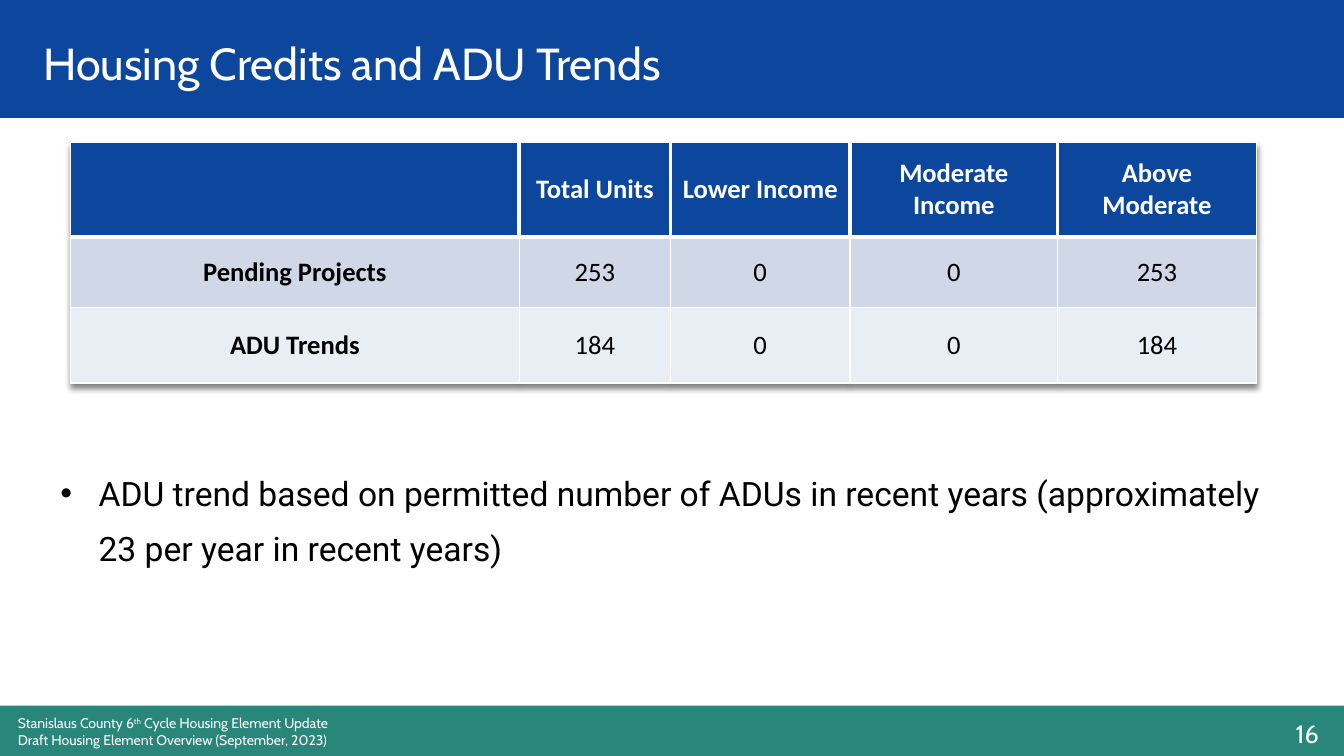
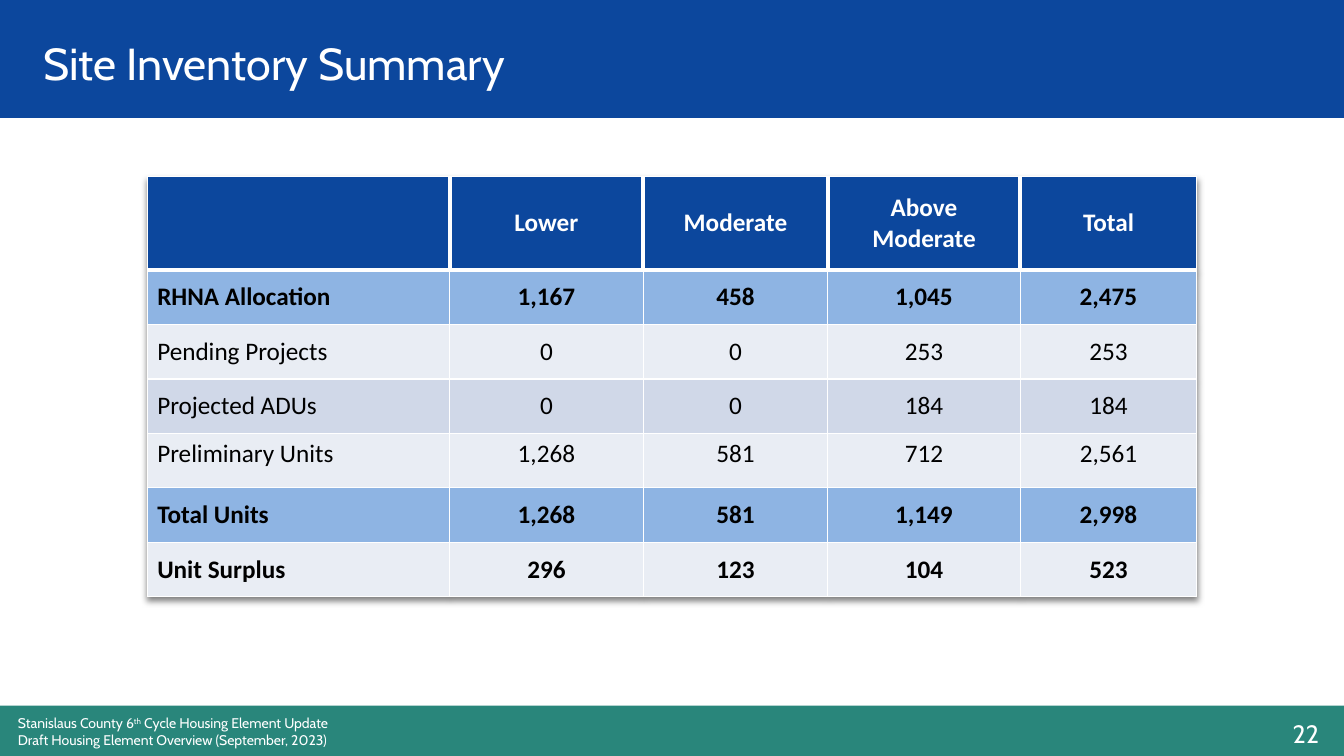
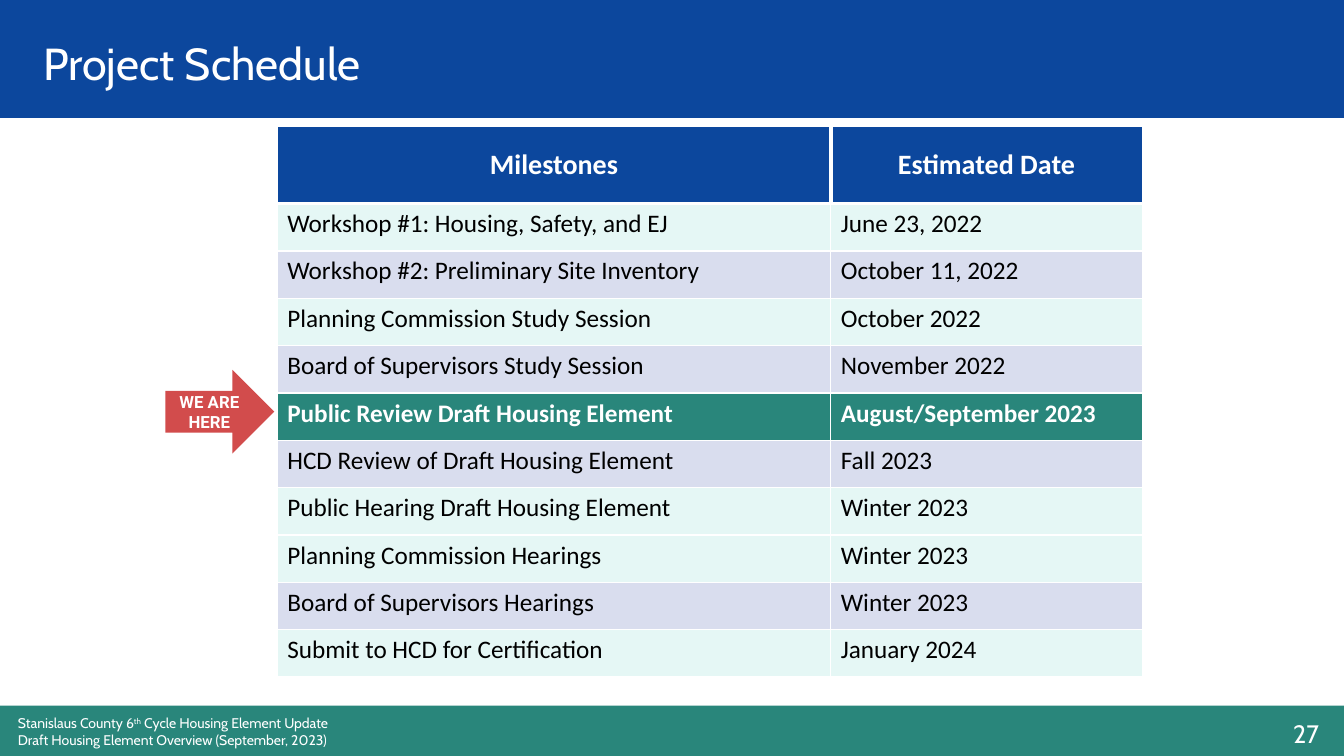
"""Build three housing element slides with tables and a schedule."""
from dataclasses import dataclass

from lxml.etree import SubElement
from pptx import Presentation
from pptx.dml.color import RGBColor
from pptx.enum.shapes import MSO_SHAPE
from pptx.enum.text import MSO_ANCHOR, PP_ALIGN
from pptx.oxml import parse_xml
from pptx.oxml.ns import nsdecls, qn
from pptx.util import Inches, Pt

COLORS = {
    "white": "FFFFFF", "black": "000000", "blue": "0C479D", "green": "29867B",
    "sky": "8EB4E3", "steel": "D0D8E8", "pale": "E9EDF4",
    "mint": "E5F7F5", "lilac": "D9DDEE", "red": "C00000",
}
LEFT, CENTER, RIGHT = PP_ALIGN.LEFT, PP_ALIGN.CENTER, PP_ALIGN.RIGHT
TOP, MIDDLE = MSO_ANCHOR.TOP, MSO_ANCHOR.MIDDLE


@dataclass
class Row:
    cells: list
    fill: str
    color: str = "black"
    bold_cols: int = 0
    anchor: MSO_ANCHOR = MIDDLE


def rgb(name):
    return RGBColor.from_string(COLORS[name])


def add_text(p, text, size=18, font="Calibri", color="white", bold=False,
             align=LEFT, baseline=0):
    p.alignment = align
    r = p.add_run()
    r.text = text
    r.font.size = Pt(size)
    r.font.name = font
    r.font.bold = bold
    r.font.color.rgb = rgb(color)
    if baseline:
        r._r.get_or_add_rPr().set("baseline", str(baseline * 1000))


def add_box(slide, x, y, w, h, anchor=TOP):
    sp = slide.shapes.add_textbox(Inches(x), Inches(y), Inches(w), Inches(h))
    tf = sp.text_frame
    tf.word_wrap = True
    tf.vertical_anchor = anchor
    return tf.paragraphs[0]


def add_filled(slide, kind, x, y, w, h, fill, alpha=100):
    sp = slide.shapes.add_shape(kind, Inches(x), Inches(y), Inches(w), Inches(h))
    sp.shadow.inherit = False
    sp.fill.solid()
    sp.fill.fore_color.rgb = rgb(fill)
    sp.line.fill.background()
    if alpha < 100:
        clr = sp._element.spPr.find(qn("a:solidFill"))[0]
        SubElement(clr, qn("a:alpha")).set("val", str(alpha * 1000))
    return sp


def add_bullet(p, text, **fmt):
    pPr = p._p.get_or_add_pPr()
    pPr.set("marL", str(Inches(0.38)))
    pPr.set("indent", str(-Inches(0.38)))
    SubElement(pPr, qn("a:buFont")).set("typeface", "Arial")
    SubElement(pPr, qn("a:buChar")).set("char", "•")
    p.line_spacing = Pt(39)
    add_text(p, text, **fmt)


def add_borders(cell, widths):
    tcPr = cell._tc.get_or_add_tcPr()
    for side, width in zip("LRTB", widths):
        tcPr.append(parse_xml(
            f'<a:ln{side} {nsdecls("a")} w="{Pt(width)}"><a:solidFill>'
            f'<a:srgbClr val="{COLORS["white"]}"/></a:solidFill></a:ln{side}>'))


def add_table_shadow(table):
    table._tbl.tblPr.insert(0, parse_xml(
        f'<a:effectLst {nsdecls("a")}><a:outerShdw blurRad="{Pt(4)}" '
        f'dist="{Pt(3)}" dir="5400000" algn="t" rotWithShape="0">'
        f'<a:srgbClr val="{COLORS["black"]}"><a:alpha val="50000"/></a:srgbClr>'
        '</a:outerShdw></a:effectLst>'))


def add_grid(slide, x, y, widths, heights, rows, aligns, size=18,
             header_size=18, shadow=True):
    frame = slide.shapes.add_table(
        len(rows), len(widths), Inches(x), Inches(y),
        Inches(sum(widths)), Inches(sum(heights)))
    table = frame.table
    table.horz_banding = False
    if shadow:
        add_table_shadow(table)
    for col, width in zip(table.columns, widths):
        col.width = Inches(width)
    last = len(widths) - 1
    for i, (row, height) in enumerate(zip(rows, heights)):
        table.rows[i].height = Inches(height)
        for j, text in enumerate(row.cells):
            cell = table.cell(i, j)
            cell.vertical_anchor = row.anchor
            inner = 1 if i else 3
            add_borders(cell, (inner if j else 1, inner if j < last else 1,
                               3 if i == 1 else 1, inner))
            cell.fill.solid()
            cell.fill.fore_color.rgb = rgb(row.fill)
            if text:
                add_text(cell.text_frame.paragraphs[0], text,
                         size=size if i else header_size, color=row.color,
                         bold=j < row.bold_cols,
                         align=aligns[j] if i else CENTER)


def add_slide(prs, title, number):
    slide = prs.slides.add_slide(prs.slide_layouts[6])
    add_filled(slide, MSO_SHAPE.RECTANGLE, 0, -0.04, 13.33, 1.21, "blue")
    add_filled(slide, MSO_SHAPE.RECTANGLE, 0, 7, 13.33, 0.5, "green")
    p = add_box(slide, 0.08, 7.04, 7.75, 0.45)
    footer = {"size": 10, "font": "Cabin"}
    add_text(p, "Stanislaus County 6", **footer)
    add_text(p, "th", baseline=30, **footer)
    add_text(p, " Cycle Housing Element Update", **footer)
    p.add_line_break()
    add_text(p, "Draft Housing Element Overview (September, 2023)", **footer)
    add_text(add_box(slide, 10.07, 7.08, 3.11, 0.5), str(number),
             font="Cabin", align=RIGHT)
    add_text(add_box(slide, 0.33, 0.16, 10.78, 0.92, MIDDLE), title,
             size=32, font="Cabin")
    return slide


def header(*cells):
    return Row(list(cells), "blue", "white", len(cells))


def build_credits(prs):
    slide = add_slide(prs, "Housing Credits and ADU Trends", 16)
    rows = [
        header("", "Total Units", "Lower Income", "Moderate Income",
               "Above Moderate"),
        Row(["Pending Projects", "253", "0", "0", "253"], "steel", bold_cols=1),
        Row(["ADU Trends", "184", "0", "0", "184"], "pale", bold_cols=1),
    ]
    add_grid(slide, 0.7, 1.41, [4.45, 1.5, 1.78, 2.06, 1.97],
             [0.94, 0.7, 0.75], rows, [CENTER] * 5, size=19, header_size=19)
    add_bullet(add_box(slide, 0.5, 4.5, 12.17, 2.2),
               "ADU trend based on permitted number of ADUs in recent years "
               "(approximately 23 per year in recent years)",
               size=24, font="Roboto", color="black")


def build_inventory(prs):
    slide = add_slide(prs, "Site Inventory Summary", 22)
    rows = [
        header("", "Lower", "Moderate", "Above Moderate", "Total"),
        Row(["RHNA Allocation", "1,167", "458", "1,045", "2,475"], "sky",
            bold_cols=5),
        Row(["Pending Projects", "0", "0", "253", "253"], "pale"),
        Row(["Projected ADUs", "0", "0", "184", "184"], "steel"),
        Row(["Preliminary Units", "1,268", "581", "712", "2,561"], "pale",
            anchor=TOP),
        Row(["Total Units", "1,268", "581", "1,149", "2,998"], "sky",
            bold_cols=5),
        Row(["Unit Surplus", "296", "123", "104", "523"], "pale", bold_cols=5),
    ]
    add_grid(slide, 1.46, 1.75, [3, 1.92, 1.83, 1.91, 1.75],
             [0.93] + [0.54] * 6, rows, [LEFT] + [CENTER] * 4)


def build_schedule(prs):
    slide = add_slide(prs, "Project Schedule", 27)
    milestones = [
        ("Workshop #1: Housing, Safety, and EJ", "June 23, 2022", "mint"),
        ("Workshop #2: Preliminary Site Inventory", "October 11, 2022", "lilac"),
        ("Planning Commission Study Session", "October 2022", "mint"),
        ("Board of Supervisors Study Session", "November 2022", "lilac"),
        ("Public Review Draft Housing Element", "August/September 2023", "green"),
        ("HCD Review of Draft Housing Element", "Fall 2023", "lilac"),
        ("Public Hearing Draft Housing Element", "Winter 2023", "mint"),
        ("Planning Commission Hearings", "Winter 2023", "mint"),
        ("Board of Supervisors Hearings", "Winter 2023", "lilac"),
        ("Submit to HCD for Certification", "January 2024", "mint"),
    ]
    rows = [header("Milestones", "Estimated Date")]
    for name, date, fill in milestones:
        current = fill == "green"
        rows.append(Row([name, date], fill, "white" if current else "black",
                        2 if current else 0, TOP))
    add_grid(slide, 2.75, 1.25, [5.49, 3.09], [0.77] + [0.47] * 10, rows,
             [LEFT] * 2, header_size=20, shadow=False)
    sp = add_filled(slide, MSO_SHAPE.RIGHT_ARROW, 1.64, 3.67, 1.08, 0.83,
                    "red", alpha=70)
    tf = sp.text_frame
    tf.word_wrap = True
    tf.vertical_anchor = MIDDLE
    add_text(tf.paragraphs[0], "WE ARE HERE", size=12, font="Roboto",
             bold=True, align=CENTER)


def main():
    prs = Presentation()
    prs.slide_width, prs.slide_height = Inches(13.33), Inches(7.5)
    build_credits(prs)
    build_inventory(prs)
    build_schedule(prs)
    prs.save("out.pptx")


if __name__ == "__main__":
    main()
